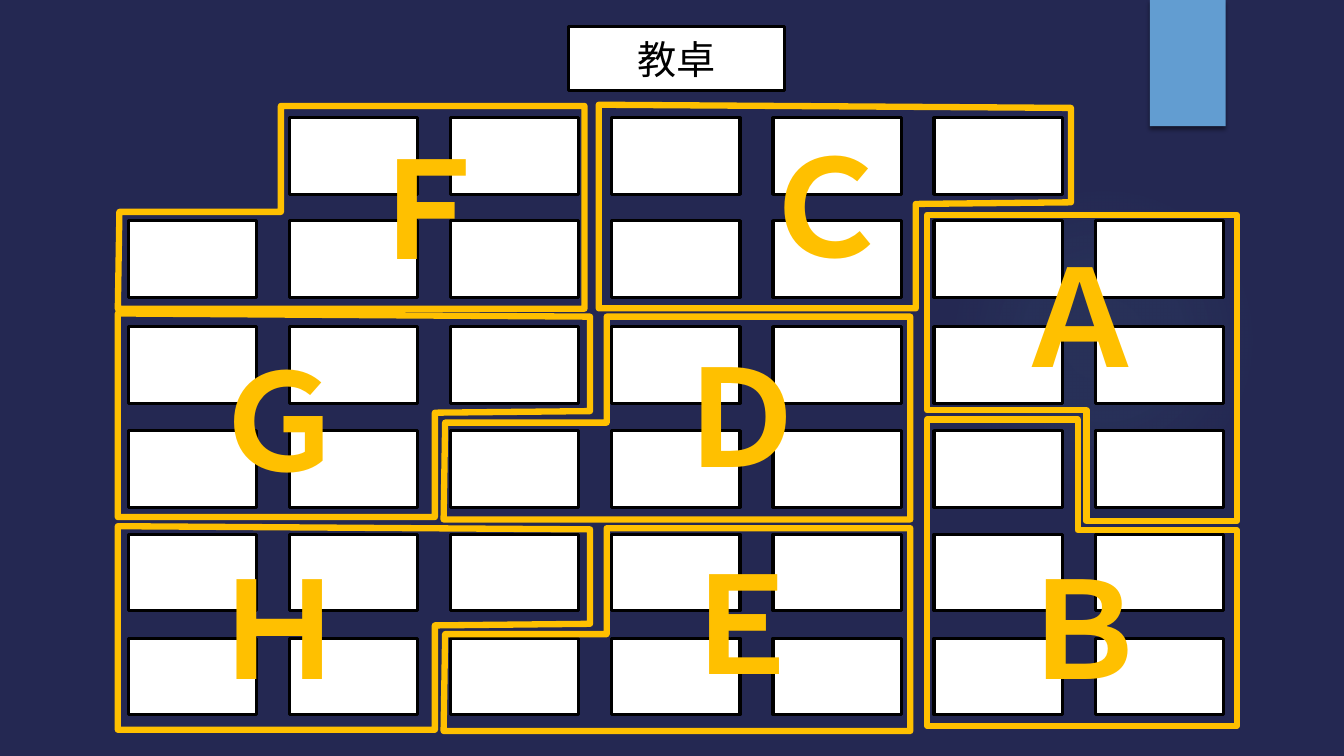
"""Build a classroom seating plan with seats split into lettered groups."""
from lxml import etree
from pptx import Presentation
from pptx.dml.color import RGBColor
from pptx.enum.shapes import MSO_SHAPE
from pptx.enum.text import MSO_ANCHOR, MSO_AUTO_SIZE, PP_ALIGN
from pptx.oxml import parse_xml
from pptx.oxml.ns import qn
from pptx.util import Cm, Pt

NAVY = RGBColor(0x24, 0x28, 0x52)
BLUE = RGBColor(0x62, 0x9D, 0xD1)
WHITE = RGBColor(0xFF, 0xFF, 0xFF)
BLACK = RGBColor(0x00, 0x00, 0x00)
GOLD = RGBColor(0xFF, 0xC0, 0x00)
TYPEFACE = "DejaVu Sans"
DRAWING_NS = 'xmlns:a="http://schemas.openxmlformats.org/drawingml/2006/main"'

TEACHER_DESK = ("教卓", (14.33, 0.66, 5.44, 1.63))
GLOW = (23.9, 4.65, 7.82, 7.82)
GLOW_STOPS = ((0, 7), (36, 6), (69, 0))
CORNER_TAB = (28.98, 0, 1.91, 3.18)

SEAT_LEFT, SEAT_PITCH = 3.24, 4.06
SEAT_WIDTH, SEAT_HEIGHT = 3.23, 1.93
SEAT_ROWS = [
    (2.97, range(1, 6)),
    (5.56, range(7)),
    (8.23, range(7)),
    (10.85, range(7)),
    (13.46, range(7)),
    (16.08, range(7)),
]

CUT_RIGHT = [(0, 0), (11.9, 0.08), (11.9, 2.46), (7.99, 2.5), (7.99, 5.13), (0, 5.13)]
CUT_LEFT = [(0, 5.11), (11.76, 5.11), (11.76, 0), (4.11, 0), (4.11, 2.67), (0.04, 2.67)]
CUT_BOTTOM = [(0, 0), (7.8, 0), (7.8, 7.72), (4.01, 7.72), (4.01, 4.93), (0, 4.93)]
CUT_TOP = [(7.8 - x, 7.72 - y) for x, y in CUT_BOTTOM]

LETTER_SIZE = (3.84, 4.37)
GROUPS = [
    ("Ａ", CUT_BOTTOM, (23.37, 5.41), (25.3, 5.74)),
    ("Ｂ", CUT_TOP, (23.37, 10.57), (25.37, 13.61)),
    ("Ｃ", CUT_RIGHT, (15.09, 2.64), (18.87, 2.97)),
    ("Ｄ", CUT_LEFT, (11.18, 7.98), (16.74, 8.28)),
    ("Ｅ", CUT_LEFT, (11.18, 13.31), (16.74, 13.49)),
    ("Ｆ", CUT_LEFT, (2.97, 2.67), (8.84, 3.02)),
    ("Ｇ", CUT_RIGHT, (2.97, 7.9), (5.11, 8.38)),
    ("Ｈ", CUT_RIGHT, (2.97, 13.26), (5.11, 13.61)),
]

DESK_FONT = {"name": TYPEFACE, "size": Pt(28)}
LETTER_FONT = {"name": TYPEFACE, "size": Pt(96), "bold": True}


def add_block(slide, box, fill, kind=MSO_SHAPE.RECTANGLE):
    block = slide.shapes.add_shape(kind, *map(Cm, box))
    block.shadow.inherit = False
    block.fill.solid()
    block.fill.fore_color.rgb = fill
    block.line.fill.background()
    return block


def add_desk(slide, box):
    desk = add_block(slide, box, WHITE)
    desk.line.color.rgb = BLACK
    desk.line.width = Pt(2.25)
    return desk


def write(frame, text, font, color):
    run = frame.paragraphs[0].add_run()
    run.text = text
    for attribute, value in font.items():
        setattr(run.font, attribute, value)
    run.font.color.rgb = color
    latin = run.font._element.find(qn("a:latin"))
    east_asian = etree.Element(qn("a:ea"), typeface=TYPEFACE)
    latin.addnext(east_asian)


def add_backdrop(slide):
    slide.background.fill.solid()
    slide.background.fill.fore_color.rgb = NAVY

    glow = add_block(slide, GLOW, BLUE, MSO_SHAPE.OVAL)
    stops = "".join(
        f'<a:gs pos="{position * 1000}"><a:srgbClr val="5AA2AE">'
        f'<a:alpha val="{alpha * 1000}"/></a:srgbClr></a:gs>'
        for position, alpha in GLOW_STOPS
    )
    gradient = parse_xml(
        f'<a:gradFill {DRAWING_NS}><a:gsLst>{stops}</a:gsLst><a:path path="circle">'
        '<a:fillToRect l="50000" t="50000" r="50000" b="50000"/></a:path></a:gradFill>'
    )
    properties = glow._element.spPr
    properties.replace(properties.find(qn("a:solidFill")), gradient)

    tab = add_block(slide, CORNER_TAB, BLUE)
    effects = tab._element.spPr.find(qn("a:effectLst"))
    effects.append(parse_xml(
        f'<a:outerShdw {DRAWING_NS} blurRad="{Pt(3)}" dist="{Pt(2)}" dir="5400000">'
        '<a:srgbClr val="000000"><a:alpha val="45000"/></a:srgbClr></a:outerShdw>'
    ))


def add_outline(slide, corners, origin):
    left, top = origin
    points = [(Cm(left + x), Cm(top + y)) for x, y in corners]
    builder = slide.shapes.build_freeform(*points[0])
    builder.add_line_segments(points[1:], close=True)
    outline = builder.convert_to_shape()
    outline.shadow.inherit = False
    outline.fill.background()
    outline.line.color.rgb = GOLD
    outline.line.width = Pt(4.5)


def add_letter(slide, letter, place):
    frame = slide.shapes.add_textbox(*map(Cm, place + LETTER_SIZE)).text_frame
    frame.word_wrap = True
    frame.auto_size = MSO_AUTO_SIZE.SHAPE_TO_FIT_TEXT
    write(frame, letter, LETTER_FONT, GOLD)


def main():
    presentation = Presentation()
    presentation.slide_width, presentation.slide_height = Cm(33.87), Cm(19.05)
    slide = presentation.slides.add_slide(presentation.slide_layouts[6])
    add_backdrop(slide)

    desk_label, desk_box = TEACHER_DESK
    desk_frame = add_desk(slide, desk_box).text_frame
    desk_frame.vertical_anchor = MSO_ANCHOR.MIDDLE
    desk_frame.paragraphs[0].alignment = PP_ALIGN.CENTER
    write(desk_frame, desk_label, DESK_FONT, BLACK)

    for top, columns in SEAT_ROWS:
        for column in columns:
            left = SEAT_LEFT + column * SEAT_PITCH
            add_desk(slide, (left, top, SEAT_WIDTH, SEAT_HEIGHT))

    for letter, corners, origin, letter_place in GROUPS:
        add_outline(slide, corners, origin)
        add_letter(slide, letter, letter_place)

    presentation.save("out.pptx")


if __name__ == "__main__":
    main()
